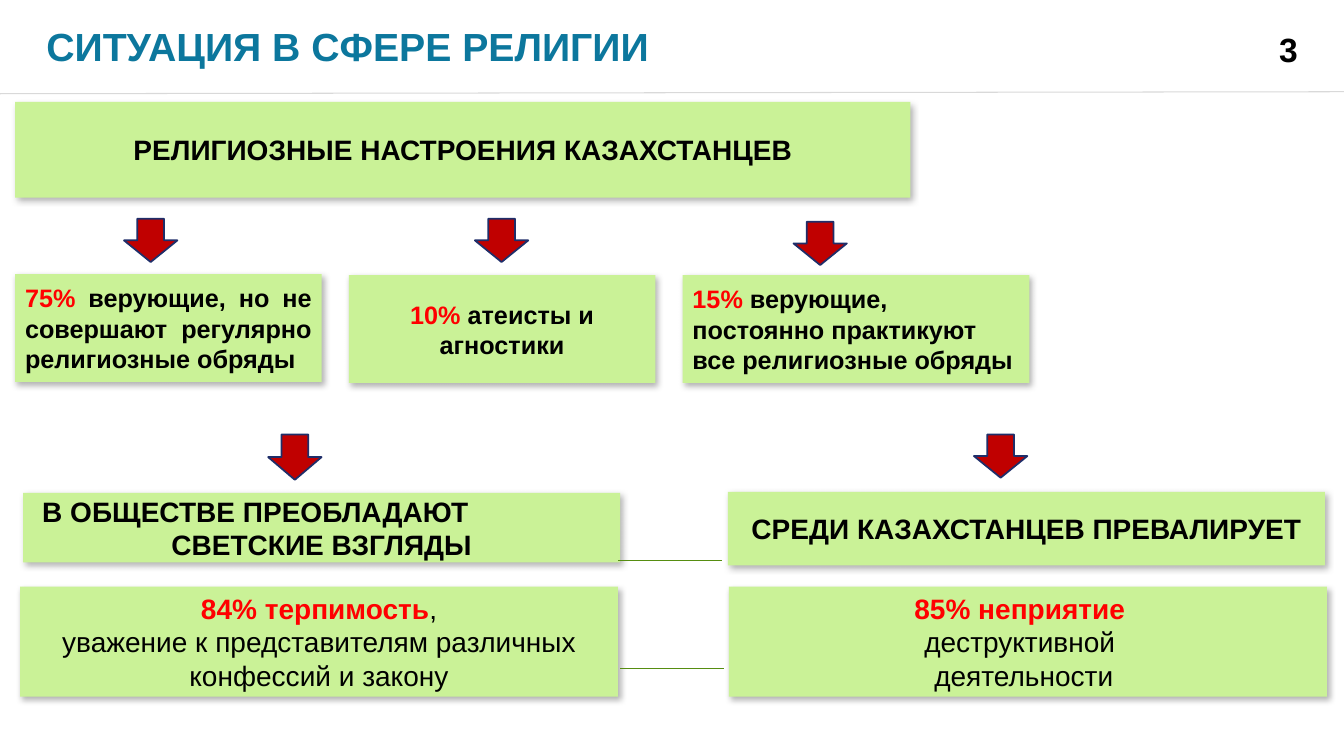
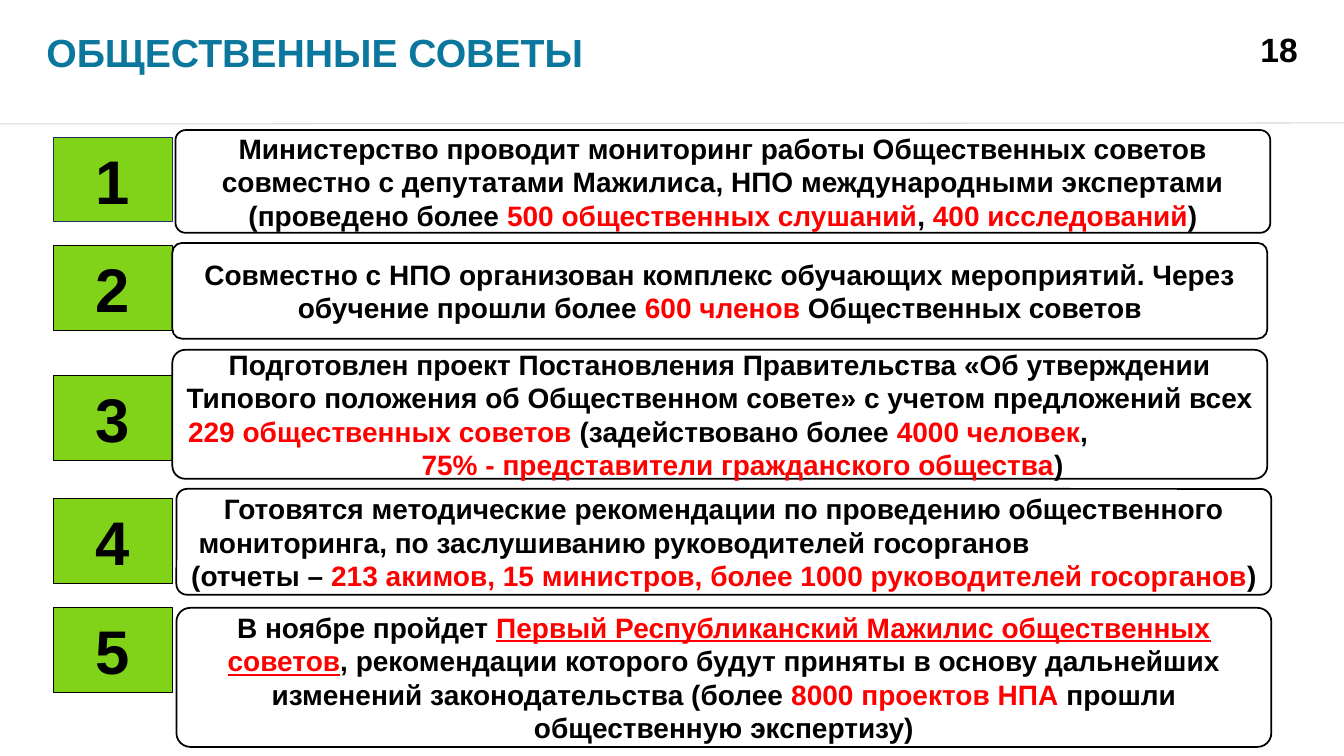
from dataclasses import dataclass

from lxml import etree
from pptx import Presentation
from pptx import util as u
from pptx.dml.color import RGBColor
from pptx.enum import shapes, text
from pptx.oxml.ns import qn

Inches = u.Inches
LEFT, CENTER, RIGHT, JUSTIFY = (
    text.PP_ALIGN.LEFT, text.PP_ALIGN.CENTER, text.PP_ALIGN.RIGHT, text.PP_ALIGN.JUSTIFY)
RECT, ROUND, ARROW = (
    shapes.MSO_SHAPE.RECTANGLE, shapes.MSO_SHAPE.ROUNDED_RECTANGLE, shapes.MSO_SHAPE.DOWN_ARROW)


@dataclass(frozen=True)
class Theme:
    font: str = "Arial"
    title: str = "0C779D"
    ink: str = "000000"
    accent: str = "FF0000"
    paper: str = "FFFFFF"
    panel: str = "CAF297"
    badge: str = "81D31A"
    arrow: str = "C00000"
    navy: str = "1F2E69"
    rule: str = "D9D9D9"
    link: str = "568D11"
    title_size: int = 28
    page_size: int = 24
    body_size: int = 20
    small_size: int = 18
    badge_size: int = 44
    thin: float = 0.75
    outline: float = 1.25


THEME = Theme()

# Content. A run is (text, style letters): b bold, r red, u underlined.
# A paragraph is (alignment, shift, runs): a positive shift is a left
# margin, a negative one a right margin, in inches.
RELIGION = {"title": "СИТУАЦИЯ В СФЕРЕ РЕЛИГИИ", "page": "3",
            "title_at": (0.36, 0.17, 11.07, 0.57), "rule": (0, 0.93, 13.33, 0.91)}
PANELS = [
    ((0.15, 1.01, 8.88, 0.95), THEME.body_size, [
        (CENTER, 0, [("РЕЛИГИОЗНЫЕ НАСТРОЕНИЯ КАЗАХСТАНЦЕВ", "b")])]),
    ((0.15, 2.72, 3.04, 1.07), THEME.small_size, [
        (JUSTIFY, 0, [("75% ", "br"),
                      ("верующие, но не совершают регулярно религиозные обряды", "b")])]),
    ((3.46, 2.73, 3.04, 1.07), THEME.small_size, [
        (CENTER, 0, [("10%", "br"), (" атеисты и агностики", "b")])]),
    ((6.77, 2.73, 3.44, 1.07), THEME.small_size, [
        (LEFT, 0, [("15%", "br"),
                   (" верующие, постоянно практикуют все религиозные обряды", "b")])]),
    ((0.23, 4.89, 5.92, 0.69), THEME.body_size, [
        (LEFT, 0.09, [("В ОБЩЕСТВЕ ПРЕОБЛАДАЮТ", "b")]),
        (CENTER, 0, [("СВЕТСКИЕ ВЗГЛЯДЫ", "b")])]),
    ((7.22, 4.88, 5.92, 0.73), THEME.body_size, [
        (CENTER, 0, [("СРЕДИ КАЗАХСТАНЦЕВ ПРЕВАЛИРУЕТ", "b")])]),
    ((0.2, 5.82, 5.93, 1.09), THEME.body_size, [
        (CENTER, 0, [("84% терпимость", "br"), (",", "")]),
        (CENTER, 0, [("уважение к представителям различных конфессий и закону", "")])]),
    ((7.23, 5.82, 5.93, 1.09), THEME.body_size, [
        (CENTER, -0.16, [("85% неприятие", "br")]),
        (CENTER, 0, [("деструктивной", "")]),
        (CENTER, -0.08, [("деятельности", "")])]),
]
ARROW_WIDTH = 0.53
ARROWS = [(1.23, 2.17, 0.43), (4.71, 2.17, 0.43), (7.87, 2.2, 0.43),
          (2.66, 4.31, 0.45), (9.66, 4.31, 0.43)]  # left, top, height
LINKS = [(6.13, 5.56), (6.15, 6.63)]
LINK_WIDTH = 1.03

COUNCILS = {"title": "ОБЩЕСТВЕННЫЕ СОВЕТЫ", "page": "18",
            "title_at": (0.36, 0.23, 11.51, 0.98), "rule": (0, 1.23, 13.33, 1.22)}
BADGE = (0.53, 1.18, 0.84)  # left, width, height
ROW_WIDTH = 10.86
# badge top, badge line, (row left, top, height), paragraphs
ROWS = [
    (1.36, THEME.navy, (1.74, 1.29, 1.02), [
        (CENTER, 0, [("Министерство проводит мониторинг работы Общественных советов совместно "
                      "с депутатами Мажилиса, НПО международными экспертами "
                      "(проведено более ", "b"),
                     ("500 общественных слушаний", "br"), (", ", "b"),
                     ("400 исследований", "br"), (")", "b")])]),
    (2.44, THEME.ink, (1.71, 2.41, 0.95), [
        (CENTER, 0, [("Совместно с НПО организован комплекс обучающих мероприятий. "
                      "Через обучение прошли более ", "b"),
                     ("600 членов ", "br"), ("Общественных советов", "b")])]),
    (3.73, THEME.ink, (1.71, 3.47, 1.28), [
        (CENTER, 0, [("Подготовлен проект Постановления Правительства «Об утверждении "
                      "Типового положения об Общественном совете» с учетом "
                      "предложений всех", "b")]),
        (LEFT, 0.02, [("229 общественных советов", "br"), (" (задействовано более ", "b"),
                      ("4000 человек", "br"), (",", "b")]),
        (CENTER, 0.45, [("75% - представители гражданского общества", "br"), (")", "b")])]),
    (4.95, THEME.ink, (1.75, 4.85, 1.05), [
        (CENTER, 0, [("Готовятся методические рекомендации по проведению "
                      "общественного", "b")]),
        (LEFT, 0.09, [("мониторинга, по заслушиванию руководителей госорганов", "b")]),
        (CENTER, 0, [("(отчеты – ", "b"),
                     ("213 акимов, 15 министров, более 1000 руководителей госорганов", "br"),
                     (")", "b")])]),
    (6.03, THEME.ink, (1.75, 6.03, 1.38), [
        (CENTER, 0, [("В ноябре пройдет ", "b"),
                     ("Первый Республиканский Мажилис общественных советов", "bru"),
                     (", рекомендации которого будут приняты в основу дальнейших "
                      "изменений законодательства (более ", "b"),
                     ("8000 проектов НПА ", "br"),
                     ("прошли общественную экспертизу)", "b")])]),
]


def rgb(value):
    return RGBColor.from_string(value)


def write(shape, paragraphs, size, color=THEME.ink, anchor=text.MSO_ANCHOR.MIDDLE):
    frame = shape.text_frame
    frame.word_wrap = True
    frame.auto_size = text.MSO_AUTO_SIZE.NONE
    frame.vertical_anchor = anchor
    for index, (align, shift, runs) in enumerate(paragraphs):
        para = frame.add_paragraph() if index else frame.paragraphs[0]
        para.alignment = align
        if shift:
            margin = "marL" if shift > 0 else "marR"
            para._p.get_or_add_pPr().set(margin, str(Inches(abs(shift))))
        for words, style in runs:
            span = para.add_run()
            span.text = words
            span.font.name = THEME.font
            span.font.size = u.Pt(size)
            span.font.bold = "b" in style
            span.font.underline = "u" in style
            span.font.color.rgb = rgb(THEME.accent if "r" in style else color)


def add_box(page, kind, at, fill, line=None, width=THEME.thin):
    box = page.shapes.add_shape(kind, *map(Inches, at))
    box.shadow.inherit = False
    box.fill.solid()
    box.fill.fore_color.rgb = rgb(fill)
    if line:
        box.line.color.rgb = rgb(line)
        box.line.width = u.Pt(width)
    else:
        box.line.fill.background()
    return box


def add_shadow(box):
    effects = box._element.spPr.find(qn("a:effectLst"))
    shadow = etree.SubElement(effects, qn("a:outerShdw"), blurRad=str(u.Pt(4.5)),
                              dist=str(u.Pt(2.6)), dir=str(53 * 60000), rotWithShape="0")
    color = etree.SubElement(shadow, qn("a:srgbClr"), val=THEME.ink)
    etree.SubElement(color, qn("a:alpha"), val="30000")


def add_line(page, ends, color):
    line = page.shapes.add_connector(shapes.MSO_CONNECTOR.STRAIGHT, *map(Inches, ends))
    line.line.color.rgb = rgb(color)
    line.line.width = u.Pt(THEME.thin)
    etree.SubElement(line._element.spPr, qn("a:effectLst"))


def add_page(deck, head):
    """Title, rule and page number shared by every slide."""
    page = deck.slides.add_slide(deck.slide_layouts[5])
    title = page.shapes.title
    title.left, title.top, title.width, title.height = map(Inches, head["title_at"])
    write(title, [(LEFT, 0, [(head["title"], "b")])], THEME.title_size, THEME.title,
          text.MSO_ANCHOR.TOP)
    add_line(page, head["rule"], THEME.rule)
    number = page.shapes.add_textbox(*map(Inches, (12.28, 0.24, 0.69, 0.51)))
    write(number, [(RIGHT, 0, [(head["page"], "b")])], THEME.page_size,
          anchor=text.MSO_ANCHOR.TOP)
    return page


def build_religion(deck):
    page = add_page(deck, RELIGION)
    for at, size, paragraphs in PANELS:
        panel = add_box(page, RECT, at, THEME.panel)
        add_shadow(panel)
        write(panel, paragraphs, size)
    for left, top, height in ARROWS:
        add_box(page, ARROW, (left, top, ARROW_WIDTH, height), THEME.arrow,
                THEME.navy, THEME.outline)
    for left, top in LINKS:
        add_line(page, (left, top, left + LINK_WIDTH, top), THEME.link)


def build_councils(deck):
    page = add_page(deck, COUNCILS)
    badge_left, badge_width, badge_height = BADGE
    for number, (badge_top, line, (left, top, height), paragraphs) in enumerate(ROWS, 1):
        badge = add_box(page, RECT, (badge_left, badge_top, badge_width, badge_height),
                        THEME.badge, line)
        write(badge, [(CENTER, 0, [(str(number), "b")])], THEME.badge_size)
        row = add_box(page, ROUND, (left, top, ROW_WIDTH, height), THEME.paper,
                      THEME.ink, THEME.outline)
        row.adjustments[0] = 0.1
        write(row, paragraphs, THEME.body_size)


def main():
    deck = Presentation()
    deck.slide_width, deck.slide_height = Inches(13.33), Inches(7.5)
    build_religion(deck)
    build_councils(deck)
    deck.save("out.pptx")


if __name__ == "__main__":
    main()
